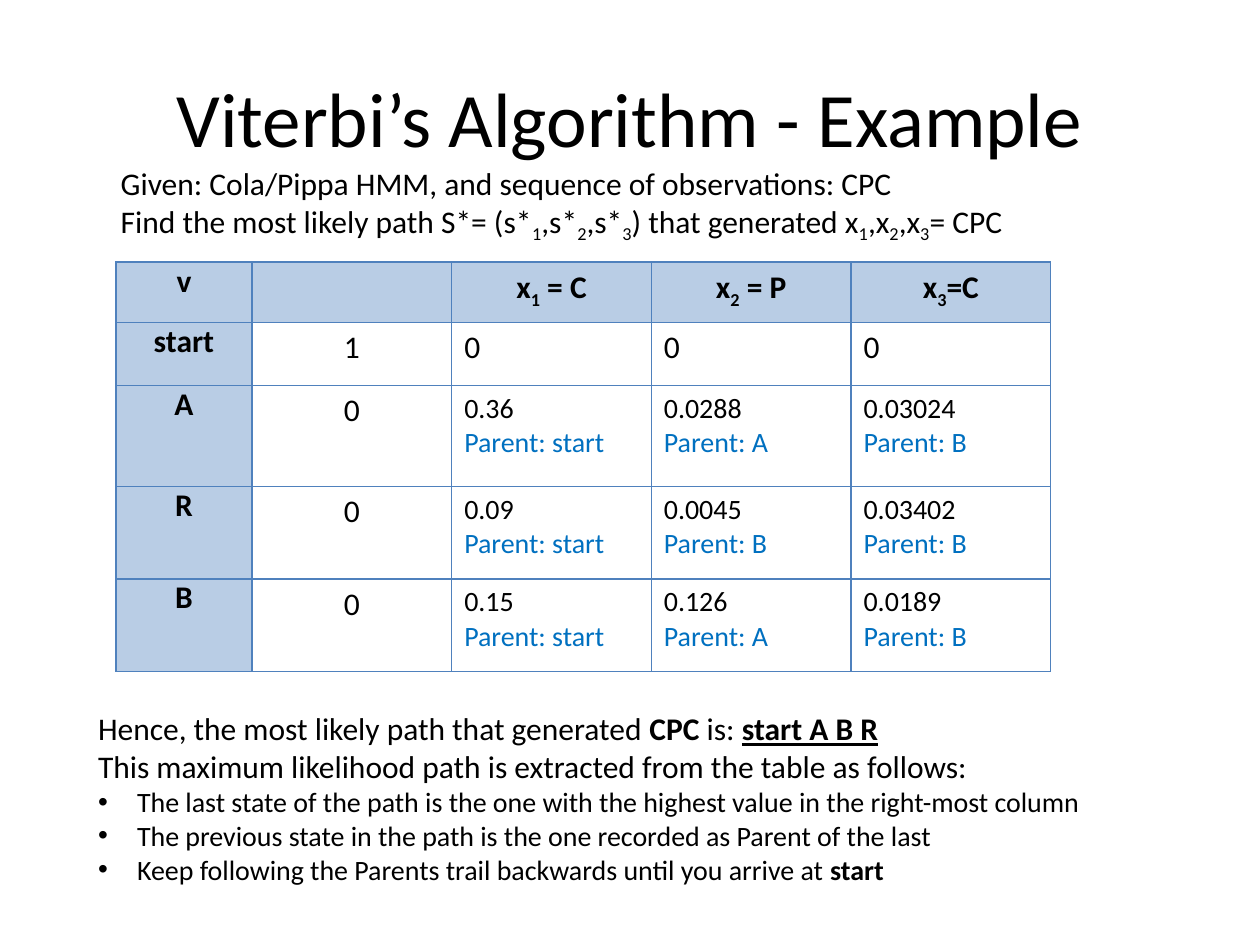
"""Build the slide showing a worked example of Viterbi's algorithm."""
import pptx
import pptx.dml.color
import pptx.enum.text
import pptx.oxml
import pptx.oxml.ns
import pptx.util
from pptx.util import Inches

THEME = {
    "font": "Calibri", "title": 44, "body": 18, "small": 16,
    "text": "000000", "parent": "0070C0", "border": "4F81BD",
    "header": "B9CDE5", "cell": "FFFFFF",
}
CENTER = pptx.enum.text.PP_ALIGN.CENTER
LEFT = pptx.enum.text.PP_ALIGN.LEFT

TITLE = "Viterbi’s Algorithm - Example"
PROBLEM = [
    [("Given: Cola/Pippa HMM, and sequence of observations: CPC", "")],
    [("Find the most likely path S*= (s*", ""), ("1", "sub"), (",s*", ""), ("2", "sub"),
     (",s*", ""), ("3", "sub"), (") that generated x", ""), ("1", "sub"), (",x", ""),
     ("2", "sub"), (",x", ""), ("3", "sub"), ("= CPC", "")],
]
OBSERVATIONS = [("1", " = C"), ("2", " = P"), ("3", "=C")]
STATES = [
    ("start", "1", [("0", None)] * 3),
    ("A", "0", [("0.36", "start"), ("0.0288", "A"), ("0.03024", "B")]),
    ("R", "0", [("0.09", "start"), ("0.0045", "B"), ("0.03402", "B")]),
    ("B", "0", [("0.15", "start"), ("0.126", "A"), ("0.0189", "B")]),
]
CONCLUSION = [
    [("Hence, the most likely path that generated ", ""), ("CPC", "bold"), (" is: ", ""),
     ("start A B R", "bold underline")],
    [("This maximum likelihood path is extracted from the table as follows:", "")],
]
STEPS = [
    [("The last state of the path is the one with the highest value in the right-most column", "")],
    [("The previous state in the path is the one recorded as Parent of the last", "")],
    [("Keep following the Parents trail backwards until you arrive at ", ""), ("start", "bold")],
]
COLUMN_WIDTHS = [1.08] + [1.585] * 4
ROW_HEIGHTS = [0.48, 0.5, 0.8, 0.735, 0.735]


def color(name):
    return pptx.dml.color.RGBColor.from_string(THEME[name])


def add_runs(paragraph, runs, size="body", tint="text"):
    for text, style in runs:
        run = paragraph.add_run()
        run.text = text
        run.font.name = THEME["font"]
        run.font.size = pptx.util.Pt(THEME[size])
        run.font.color.rgb = color(tint)
        run.font.bold = "bold" in style
        if "underline" in style:
            run.font.underline = True
        if "sub" in style:
            run.font._element.set("baseline", "-25000")


def add_bullet(paragraph):
    properties = paragraph._p.get_or_add_pPr()
    properties.set("marL", str(Inches(0.31)))
    properties.set("indent", str(Inches(-0.31)))
    namespace = pptx.oxml.ns.nsdecls("a")
    for element in ('buFont {} typeface="Arial"', 'buChar {} char="•"'):
        properties.append(pptx.oxml.parse_xml(f"<a:{element.format(namespace)}/>"))


def next_paragraph(frame, index):
    return frame.add_paragraph() if index else frame.paragraphs[0]


def add_text_box(slide, box, lines, bullets=(), wrap=True):
    frame = slide.shapes.add_textbox(*map(Inches, box)).text_frame
    frame.word_wrap = wrap
    frame.auto_size = pptx.enum.text.MSO_AUTO_SIZE.SHAPE_TO_FIT_TEXT
    for index, runs in enumerate([*lines, *bullets]):
        paragraph = next_paragraph(frame, index)
        is_bullet = index >= len(lines)
        if is_bullet:
            add_bullet(paragraph)
        add_runs(paragraph, runs, "small" if is_bullet else "body")


def fill_cell(cell, lines, alignment=LEFT, fill="cell"):
    cell.fill.solid()
    cell.fill.fore_color.rgb = color(fill)
    for index, (runs, size, tint) in enumerate(lines):
        paragraph = next_paragraph(cell.text_frame, index)
        paragraph.alignment = alignment
        add_runs(paragraph, runs, size, tint)
    properties = cell._tc.get_or_add_tcPr()
    for index, side in enumerate(("lnL", "lnR", "lnT", "lnB")):
        properties.insert(index, pptx.oxml.parse_xml(
            f'<a:{side} {pptx.oxml.ns.nsdecls("a")} w="12700"><a:solidFill>'
            f'<a:srgbClr val="{THEME["border"]}"/></a:solidFill></a:{side}>'))


def fill_label(cell, text):
    cell.margin_left = cell.margin_right = cell.margin_top = cell.margin_bottom = 0
    fill_cell(cell, [([(text, "bold")], "body", "text")], CENTER, "header")


def add_probability_table(slide):
    table = slide.shapes.add_table(
        len(ROW_HEIGHTS), len(COLUMN_WIDTHS), Inches(0.92), Inches(2.08),
        Inches(sum(COLUMN_WIDTHS)), Inches(sum(ROW_HEIGHTS))).table
    table.first_row = table.horz_banding = False
    for column, width in zip(table.columns, COLUMN_WIDTHS):
        column.width = Inches(width)
    for row, height in zip(table.rows, ROW_HEIGHTS):
        row.height = Inches(height)
    fill_label(table.cell(0, 0), "v")
    fill_cell(table.cell(0, 1), [], CENTER, "header")
    for column, (number, value) in enumerate(OBSERVATIONS, 2):
        runs = [("x", "bold"), (number, "bold sub"), (value, "bold")]
        fill_cell(table.cell(0, column), [(runs, "body", "text")], CENTER, "header")
    for row, (state, initial, entries) in enumerate(STATES, 1):
        fill_label(table.cell(row, 0), state)
        fill_cell(table.cell(row, 1), [([(initial, "")], "body", "text")], CENTER)
        for column, (value, parent) in enumerate(entries, 2):
            lines = [([(value, "")], "small" if parent else "body", "text")]
            if parent:
                lines.append(([(f"Parent: {parent}", "")], "small", "parent"))
            fill_cell(table.cell(row, column), lines)


def main():
    presentation = pptx.Presentation()
    presentation.slide_width, presentation.slide_height = Inches(10), Inches(7.5)
    slide = presentation.slides.add_slide(presentation.slide_layouts.get_by_name("Title Only"))
    title = slide.shapes.title
    title.left, title.top, title.width, title.height = map(Inches, (0.5, 0.3, 9, 1.25))
    title.text_frame.vertical_anchor = pptx.enum.text.MSO_ANCHOR.MIDDLE
    paragraph = title.text_frame.paragraphs[0]
    paragraph.alignment = CENTER
    add_runs(paragraph, [(TITLE, "")], "title")
    add_probability_table(slide)
    add_text_box(slide, (0.86, 1.25, 7.39, 0.71), PROBLEM, wrap=False)
    add_text_box(slide, (0.68, 5.58, 8.07, 1.51), CONCLUSION, STEPS)
    presentation.save("out.pptx")


if __name__ == "__main__":
    main()
